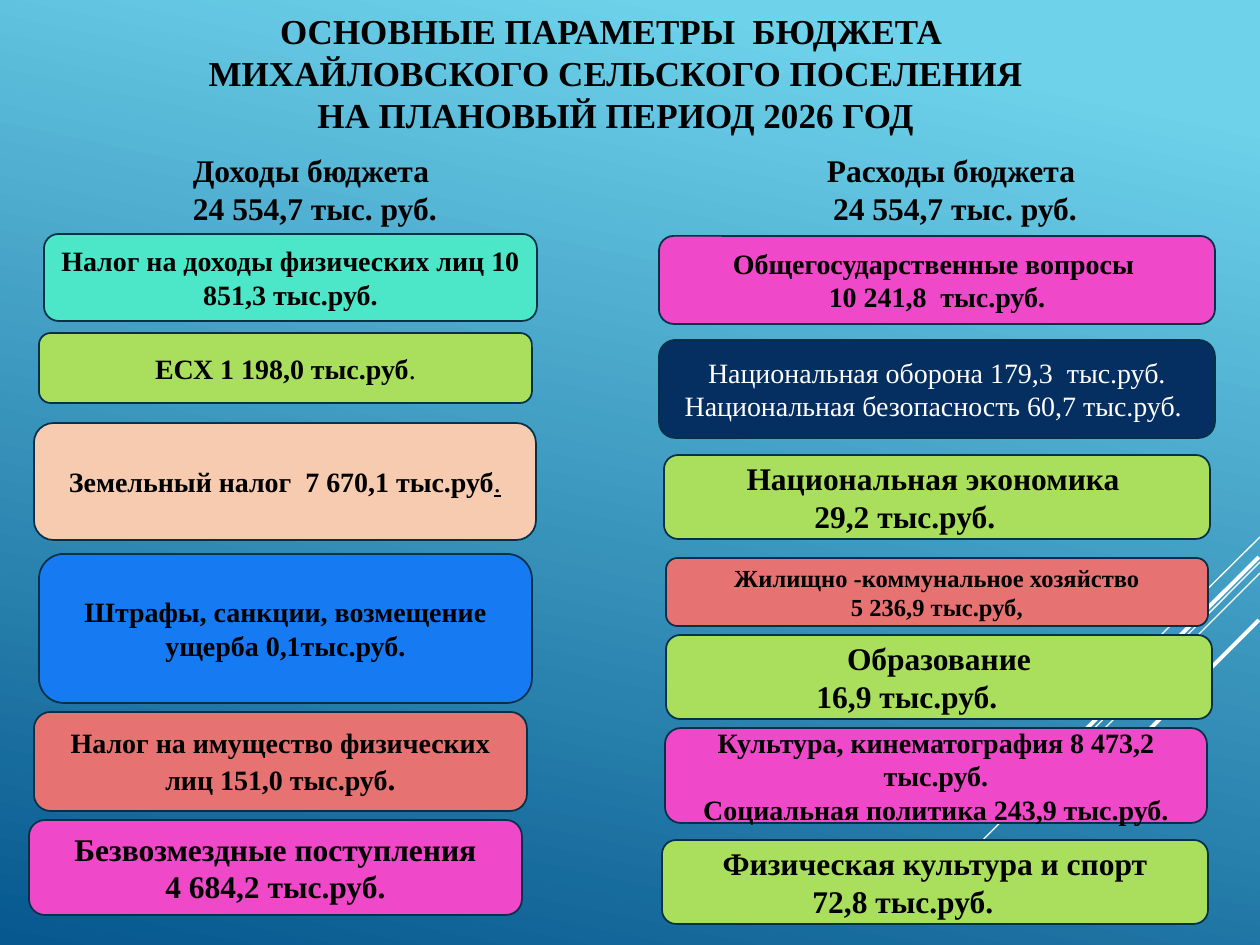
from lxml import etree
from pptx import Presentation
from pptx import util as u
from pptx.dml.color import RGBColor
from pptx.enum import shapes, text
from pptx.oxml.ns import qn

PX = u.Inches(1) / 126
FONT = "Times New Roman"
BLACK, WHITE, OUTLINE = "000000", "FFFFFF", "043148"
GREEN, PINK, CORAL, NAVY = "AADF5E", "EF48C9", "E67272", "052F61"
MINT, PEACH, BLUE = "4BE7C8", "F6CBAF", "167BF3"


def px(n):
    return u.Emu(round(n * PX))


def rgb(code):
    return RGBColor.from_string(code)


class BudgetSlide:
    def __init__(self, prs):
        self.slide = prs.slides.add_slide(prs.slide_layouts[6])

    def background(self, top, bottom, angle):
        fill = self.slide.background.fill
        fill.gradient()
        fill.gradient_angle = angle
        for stop, color, position in zip(fill.gradient_stops, (top, bottom), (0.1, 1)):
            stop.color.rgb = rgb(color)
            stop.position = position

    def line(self, x1, y1, x2, y2, width):
        stroke = self.slide.shapes.add_connector(
            shapes.MSO_CONNECTOR.STRAIGHT, px(x1), px(y1), px(x2), px(y2))
        stroke.line.color.rgb = rgb(WHITE)
        stroke.line.width = u.Pt(width)
        etree.SubElement(stroke._element.spPr, qn("a:effectLst"))

    def run(self, paragraph, words, size, color=BLACK, bold=True, underline=None):
        run = paragraph.add_run()
        run.text = words
        font = run.font
        font.name, font.size = FONT, u.Pt(size)
        font.bold, font.underline = bold, underline
        font.color.rgb = rgb(color)

    def paragraphs(self, frame, lines, size, color=BLACK, bold=True):
        """Add one centred paragraph per line."""
        frame.word_wrap = True
        for i, words in enumerate(lines):
            paragraph = frame.add_paragraph() if i else frame.paragraphs[0]
            paragraph.alignment = text.PP_ALIGN.CENTER
            self.run(paragraph, words, size, color, bold)

    def title(self, x, y, w, h, lines, size):
        frame = self.slide.shapes.add_textbox(px(x), px(y), px(w), px(h)).text_frame
        frame.word_wrap = True
        frame.vertical_anchor = text.MSO_ANCHOR.MIDDLE
        paragraph = frame.paragraphs[0]
        paragraph.alignment = text.PP_ALIGN.CENTER
        for i, words in enumerate(lines):
            if i:
                paragraph.add_line_break()
            self.run(paragraph, words, size)

    def heading(self, x, y, w, h, lines):
        box = self.slide.shapes.add_textbox(px(x), px(y), px(w), px(h))
        self.paragraphs(box.text_frame, lines, 18)

    def card(self, x, y, w, h, fill, lines, size=16, color=BLACK, bold=True):
        """Draw a rounded budget item and return its text frame."""
        card = self.slide.shapes.add_shape(
            shapes.MSO_SHAPE.ROUNDED_RECTANGLE, px(x), px(y), px(w), px(h))
        card.shadow.inherit = False
        card.fill.solid()
        card.fill.fore_color.rgb = rgb(fill)
        card.line.color.rgb = rgb(OUTLINE)
        card.line.width = u.Pt(1)
        card.text_frame.vertical_anchor = text.MSO_ANCHOR.MIDDLE
        self.paragraphs(card.text_frame, lines, size, color, bold)
        return card.text_frame

    def sector(self, x, y, name, amount):
        """Draw a green spending card whose amount is indented from the left."""
        frame = self.card(x, y, 546, 84, GREEN, [name, amount], 18)
        paragraph = frame.paragraphs[1]
        paragraph.alignment = text.PP_ALIGN.LEFT
        paragraph._p.get_or_add_pPr().set("marL", str(px(134)))


def main():
    prs = Presentation()
    prs.slide_width, prs.slide_height = px(1260), px(945)
    budget = BudgetSlide(prs)
    budget.background("6ED2EB", "06588E", 258)

    for stroke in [(1260, 537, 1155, 641, 0.75), (1260, 562, 920, 903, 0.75),
                   (1260, 573, 1043, 790, 0.75), (1259, 557, 1060, 755, 2.25),
                   (1259, 620, 1115, 764, 2.25)]:
        budget.line(*stroke)

    budget.title(59, 16, 1113, 112, ["ОСНОВНЫЕ ПАРАМЕТРЫ  БЮДЖЕТА ",
                                     " МИХАЙЛОВСКОГО СЕЛЬСКОГО ПОСЕЛЕНИЯ ",
                                     "НА ПЛАНОВЫЙ ПЕРИОД 2026 ГОД"], 20)
    budget.heading(39, 145, 552, 89, ["Доходы бюджета ", " 24 554,7 тыс. руб. "])
    budget.heading(699, 145, 512, 89, ["Расходы бюджета ", "24 554,7 тыс. руб."])

    # Income
    budget.card(44, 234, 493, 87, MINT,
                ["Налог на доходы физических лиц 10 851,3 тыс.руб."])
    farm_tax = budget.card(39, 333, 493, 70, GREEN, ["ЕСХ 1 198,0 тыс.руб"])
    budget.run(farm_tax.paragraphs[0], ".", 16, bold=False)
    land_tax = budget.card(34, 423, 502, 117, PEACH, ["Земельный налог  7 670,1 тыс.руб"])
    budget.run(land_tax.paragraphs[0], ".", 16, bold=False, underline=True)
    budget.card(39, 554, 493, 149, BLUE,
                ["Штрафы, санкции, возмещение ущерба 0,1тыс.руб."])
    property_tax = budget.card(34, 712, 493, 99, CORAL,
                               ["Налог на имущество физических лиц 151,0 тыс.руб"])
    budget.run(property_tax.paragraphs[0], ".", 18)
    budget.card(29, 820, 493, 95, PINK,
                ["Безвозмездные поступления", "4 684,2 тыс.руб."], 18)

    # Spending
    budget.card(659, 236, 556, 88, PINK,
                ["Общегосударственные вопросы ", "10 241,8  тыс.руб."])
    budget.card(659, 340, 556, 98, NAVY,
                ["Национальная оборона 179,3  тыс.руб.",
                 "Национальная безопасность 60,7 тыс.руб. "], color=WHITE, bold=False)
    budget.sector(664, 455, "Национальная экономика ", "29,2 тыс.руб.")
    budget.card(666, 558, 542, 68, CORAL,
                ["Жилищно -коммунальное хозяйство", "5 236,9 тыс.руб,"], 14)
    budget.sector(666, 635, "Образование", "16,9 тыс.руб.")
    budget.card(665, 728, 542, 95, PINK,
                ["Культура, кинематография 8 473,2 тыс.руб.",
                 "Социальная политика 243,9 тыс.руб."])
    budget.sector(662, 840, "Физическая культура и спорт", "72,8 тыс.руб.")

    prs.save("out.pptx")


if __name__ == "__main__":
    main()
